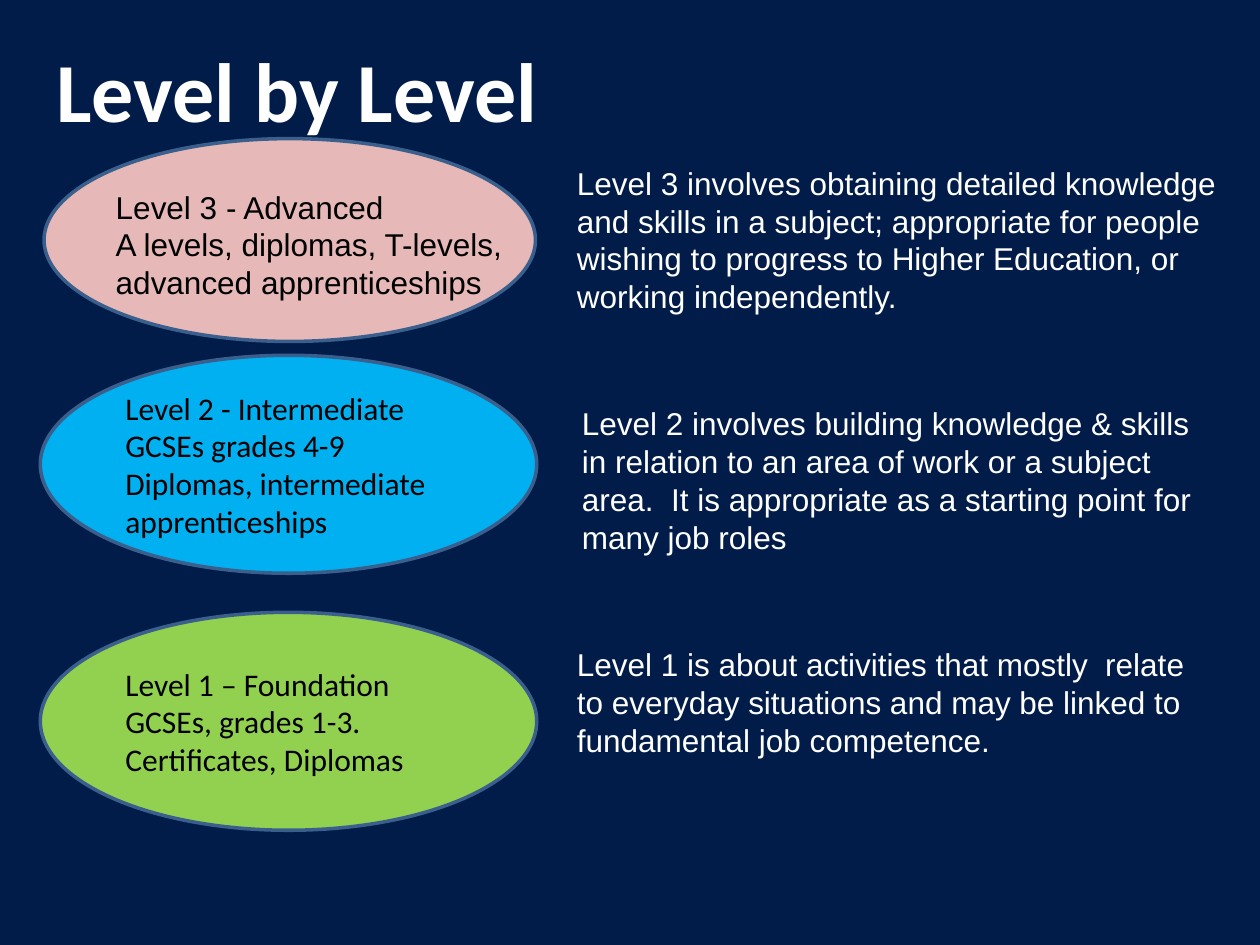
from dataclasses import dataclass

from pptx import Presentation
from pptx import util as u
from pptx.dml.color import RGBColor
from pptx.enum import shapes, text

NAVY = RGBColor(0x01, 0x1C, 0x49)
WHITE = RGBColor(0xFF, 0xFF, 0xFF)
BLACK = RGBColor(0x00, 0x00, 0x00)
PINK = RGBColor(0xE6, 0xB9, 0xB8)
BLUE = RGBColor(0x00, 0xB0, 0xF0)
GREEN = RGBColor(0x92, 0xD0, 0x50)
OUTLINE = RGBColor(0x3A, 0x5F, 0x8C)

Box = tuple[float, float, float, float]


@dataclass
class Level:
    oval: Box
    fill: RGBColor
    label: list[str]
    note_box: Box
    note: str
    label_box: Box | None = None  # separate text box over the oval


LEVELS = [
    Level((0.35, 1.1, 3.9, 1.61), PINK,
          ["Level 3 - Advanced",
           "A levels, diplomas, T-levels, advanced apprenticeships"],
          (4.48, 1.25, 5.4, 1.31),
          "Level 3 involves obtaining detailed knowledge and skills in a "
          "subject; appropriate for people wishing to progress to Higher "
          "Education, or working independently.",
          label_box=(0.82, 1.44, 3.28, 1.01)),
    Level((0.32, 2.82, 3.94, 1.73), BLUE,
          ["Level 2 - Intermediate", "GCSEs grades 4-9",
           "Diplomas, intermediate apprenticeships"],
          (4.52, 3.16, 5.17, 1.31),
          "Level 2 involves building knowledge & skills in relation to an "
          "area of work or a subject area.  It is appropriate as a starting "
          "point for many job roles"),
    Level((0.32, 4.86, 3.94, 1.73), GREEN,
          ["Level 1 – Foundation GCSEs, grades 1-3. Certificates, Diplomas"],
          (4.48, 5.07, 5.1, 1.01),
          "Level 1 is about activities that mostly  relate to everyday "
          "situations and may be linked to fundamental job competence."),
]


def inches(box: Box) -> list[u.Length]:
    return [u.Inches(v) for v in box]


def write(tf, lines: list[str], color: RGBColor, font: str = "Arial",
          size: int = 18, bold: bool = False) -> None:
    tf.word_wrap = True
    for i, line in enumerate(lines):
        p = tf.paragraphs[0] if i == 0 else tf.add_paragraph()
        p.text = line
        p.alignment = text.PP_ALIGN.LEFT
        p.font.name = font
        p.font.size = u.Pt(size)
        p.font.bold = bold
        p.font.color.rgb = color


def add_text(s, box: Box, lines: list[str], color: RGBColor, **style):
    tf = s.shapes.add_textbox(*inches(box)).text_frame
    write(tf, lines, color, **style)
    return tf


def add_level(s, level: Level) -> None:
    sp = s.shapes.add_shape(shapes.MSO_SHAPE.OVAL, *inches(level.oval))
    sp.shadow.inherit = False
    sp.fill.solid()
    sp.fill.fore_color.rgb = level.fill
    sp.line.color.rgb = OUTLINE
    sp.line.width = u.Pt(2)
    if level.label_box:
        add_text(s, level.label_box, level.label, BLACK)
    else:
        sp.text_frame.vertical_anchor = text.MSO_ANCHOR.MIDDLE
        write(sp.text_frame, level.label, BLACK, font="Calibri")
    add_text(s, level.note_box, [level.note], WHITE)


def main() -> None:
    prs = Presentation()
    prs.slide_width, prs.slide_height = u.Inches(10), u.Inches(7.5)
    s = prs.slides.add_slide(prs.slide_layouts[6])
    s.background.fill.solid()
    s.background.fill.fore_color.rgb = NAVY

    # Title
    tf = add_text(s, (0.35, 0.08, 9.22, 1.25), ["Level by Level"], WHITE,
                  font="Calibri", size=48, bold=True)
    tf.vertical_anchor = text.MSO_ANCHOR.MIDDLE

    # Levels, highest first
    for level in LEVELS:
        add_level(s, level)

    prs.save("out.pptx")


if __name__ == "__main__":
    main()
